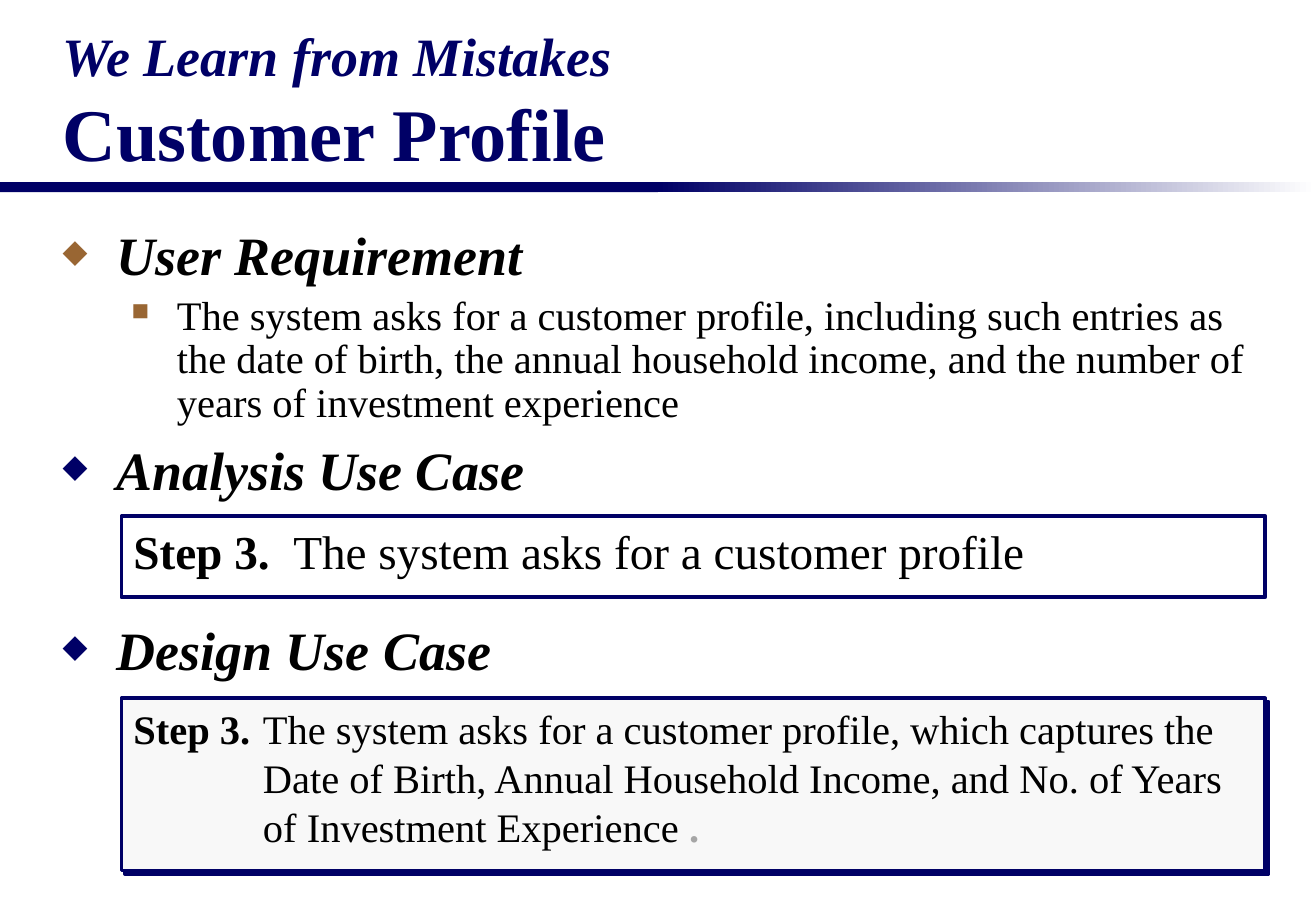
from lxml import etree
from pptx import Presentation, util as u
from pptx.dml.color import RGBColor
from pptx.enum import shapes, text
from pptx.oxml.ns import qn

NAVY, BROWN, BLACK, GREY = "000066", "996633", "000000", "A6A6A6"


def px(n):
    """Turn px (120 to the inch) into EMU."""
    return u.Emu(n * 7620)


def rgb(value):
    return RGBColor.from_string(value)


def add_xml(parent, tag, **attrs):
    return etree.SubElement(parent, qn("a:" + tag), attrs)


class Deck:
    FONT = "Times New Roman"

    def __init__(self, width, height):
        self.prs = Presentation()
        self.prs.slide_width, self.prs.slide_height = px(width), px(height)
        self.s = self.prs.slides.add_slide(self.prs.slide_layouts[6])

    def rect(self, x, y, w, h, fill=None, line=None):
        sp = self.s.shapes.add_shape(
            shapes.MSO_SHAPE.RECTANGLE, px(x), px(y), px(w), px(h))
        sp.shadow.inherit = False
        if fill:
            sp.fill.solid()
            sp.fill.fore_color.rgb = rgb(fill)
        else:
            sp.fill.background()
        if line:
            sp.line.color.rgb = rgb(line)
            sp.line.width = u.Pt(2.25)
        else:
            sp.line.fill.background()
        return sp

    def fade(self, sp, *colors):
        sp.fill.gradient()
        sp.fill.gradient_angle = 0
        for i, (stop, color) in enumerate(zip(sp.fill.gradient_stops, colors)):
            stop.position = i
            stop.color.rgb = rgb(color)

    def drop_shadow(self, sp, color):
        effects = sp._element.spPr.find(qn("a:effectLst"))
        shadow = add_xml(effects, "outerShdw", dist=str(u.Pt(2.8)),
                         dir="2700000", algn="ctr", rotWithShape="0")
        add_xml(shadow, "srgbClr", val=color)

    def textbox(self, x, y, w, h, anchor=text.MSO_ANCHOR.TOP):
        sp = self.s.shapes.add_textbox(px(x), px(y), px(w), px(h))
        return self.frame(sp, anchor)

    def frame(self, sp, anchor=text.MSO_ANCHOR.TOP):
        tf = sp.text_frame
        tf.word_wrap = True
        tf.vertical_anchor = anchor
        return tf

    def para(self, tf, runs, size, color=BLACK, italic=False, indent=0,
             hang=0, before=0, after=0, spacing=None, bullet=None):
        """Add a paragraph; runs are (words, bold[, color]), bullet is (char, color)."""
        p = tf.paragraphs[0] if not tf.paragraphs[0].runs else tf.add_paragraph()
        p.alignment = text.PP_ALIGN.LEFT
        p.space_before, p.space_after = u.Pt(before), u.Pt(after)
        if spacing:
            p.line_spacing = spacing
        pPr = p._p.get_or_add_pPr()
        pPr.set("marL", str(px(indent)))
        pPr.set("indent", str(px(-hang)))
        if bullet:
            char, bullet_color = bullet
            add_xml(add_xml(pPr, "buClr"), "srgbClr", val=bullet_color)
            add_xml(pPr, "buSzPct", val="60000")
            add_xml(pPr, "buChar", char=char)
        p.font.name, p.font.size, p.font.italic = self.FONT, u.Pt(size), italic
        p.font.color.rgb = rgb(color)
        for words, bold, *own_color in runs:
            r = p.add_run()
            r.text = words
            r.font.bold = bold
            if own_color:
                r.font.color.rgb = rgb(own_color[0])

    def heading(self, tf, words, color, spacing=0.9):
        self.para(tf, [(words, True)], 32, italic=True, indent=53, hang=53,
                  before=6.4, spacing=spacing, bullet=("◆", color))

    def step(self, sp, runs, size):
        self.para(self.frame(sp), runs, size, indent=128, hang=128,
                  after=size / 10)


def main():
    d = Deck(1300, 900)
    d.rect(0, 180, 650, 10, NAVY)
    d.fade(d.rect(650, 180, 650, 10), NAVY, "FFFFFF")

    title = d.textbox(50, 40, 1200, 140, text.MSO_ANCHOR.BOTTOM)
    d.para(title, [("We Learn from Mistakes", True)], 32, NAVY, italic=True)
    d.para(title, [("Customer Profile", True)], 44, NAVY)

    body = d.textbox(50, 220, 1210, 300)
    d.heading(body, "User Requirement", BROWN)
    d.para(body, [("The system asks for a customer profile, including such "
                   "entries as the date of birth, the annual household income, "
                   "and the number of years of investment experience", False)],
           24, indent=113, hang=45, before=4.8, spacing=0.9,
           bullet=("■", BROWN))
    d.heading(body, "Analysis Use Case", NAVY, spacing=None)
    d.heading(d.textbox(50, 610, 1200, 80), "Design Use Case", NAVY)

    analysis = d.rect(120, 510, 1130, 80, line=NAVY)
    d.step(analysis, [("Step 3.  ", True),
                      ("The system asks for a customer profile", False)], 28)

    design = d.rect(120, 690, 1130, 170, "F8F8F8", NAVY)
    d.drop_shadow(design, NAVY)
    d.step(design, [("Step 3.\t", True),
                    ("The system asks for a customer profile, which captures "
                     "the Date of Birth, Annual Household Income, and No. of "
                     "Years of Investment Experience ", False),
                    (".", True, GREY)], 24)
    d.prs.save("out.pptx")


if __name__ == "__main__":
    main()
